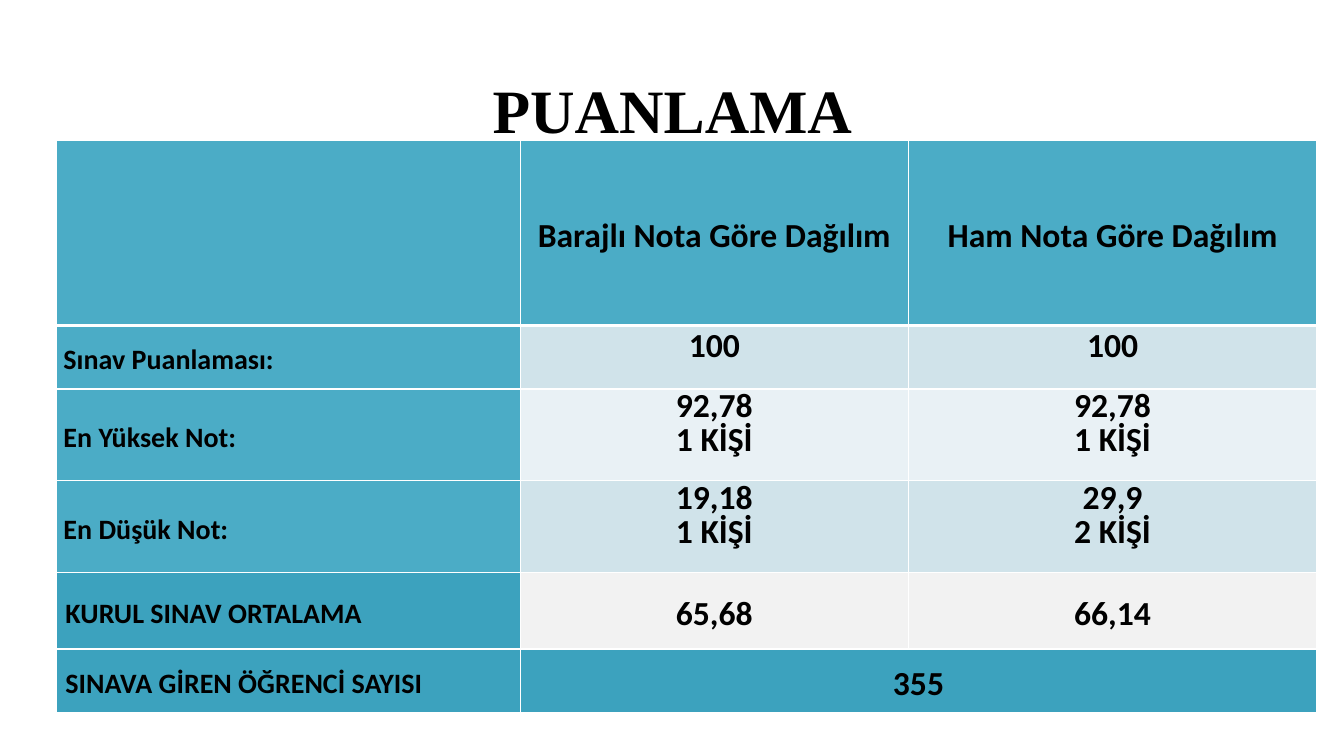
"""Build the PUANLAMA slide with its score table."""
from lxml.etree import SubElement
from pptx import Presentation
from pptx.dml.color import RGBColor
from pptx.enum.text import MSO_ANCHOR, MSO_AUTO_SIZE, PP_ALIGN
from pptx.oxml.ns import qn
from pptx.util import Inches, Pt

TITLE = "PUANLAMA"
ROWS = [
    ("", "Barajlı Nota Göre Dağılım", "Ham Nota Göre Dağılım"),
    ("Sınav Puanlaması:", "100", "100"),
    ("En Yüksek Not:", "92,78\n1 KİŞİ", "92,78\n1 KİŞİ"),
    ("En Düşük Not:", "19,18\n1 KİŞİ", "29,9\n2 KİŞİ"),
    ("KURUL SINAV ORTALAMA", "65,68", "66,14"),
    ("SINAVA GİREN ÖĞRENCİ SAYISI", "355", ""),
]
COL_WIDTHS = [4.6, 3.85, 4.05]
ROW_HEIGHTS = [1.84, 0.63, 0.91, 0.91, 0.76, 0.63]
COLORS = {"text": "000000", "border": "FFFFFF", "head": "4BACC6", "total": "3CA2BE",
          "band": "D0E3EA", "light": "E9F1F5", "mean": "F2F2F2"}
LABEL_FILLS = ["head"] * 4 + ["total"] * 2
VALUE_FILLS = ["head", "band", "light", "band", "mean", "total"]
SCORE_ROWS = (1, 2, 3)


def add_run(p, text, size, font):
    r = p.add_run()
    r.text = text
    r.font.size = Pt(size)
    r.font.name = font
    r.font.bold = True
    r.font.color.rgb = RGBColor.from_string(COLORS["text"])


def set_borders(cell, row):
    widths = {"a:lnL": 1, "a:lnR": 1, "a:lnT": 3 if row == 1 else 1, "a:lnB": 3 if row == 0 else 1}
    tcPr = cell._tc.get_or_add_tcPr()
    for i, (tag, width) in enumerate(widths.items()):
        ln = SubElement(tcPr, qn(tag), w=str(Pt(width)))
        fill = SubElement(ln, qn("a:solidFill"))
        SubElement(fill, qn("a:srgbClr"), val=COLORS["border"])
        tcPr.insert(i, ln)


def fill_cell(cell, row, col, text):
    is_label = col == 0
    cell.fill.solid()
    fills = LABEL_FILLS if is_label else VALUE_FILLS
    cell.fill.fore_color.rgb = RGBColor.from_string(COLORS[fills[row]])
    set_borders(cell, row)
    cell.vertical_anchor = MSO_ANCHOR.MIDDLE
    side, top = (0, 0) if (row, col) == (4, 2) else (0.07, 0.01)
    cell.margin_left = cell.margin_right = Inches(side)
    cell.margin_top, cell.margin_bottom = Inches(top), 0
    if not text:
        return
    tf = cell.text_frame
    for i, line in enumerate(text.split("\n")):
        p = tf.add_paragraph() if i else tf.paragraphs[0]
        p.alignment = PP_ALIGN.LEFT if is_label else PP_ALIGN.CENTER
        p.line_spacing = Pt(12) if row in SCORE_ROWS and not is_label else 1.15
        if i:
            p.space_before = Pt(12)
        if is_label and row in SCORE_ROWS:
            p.space_after = Pt(10)
        elif is_label:
            p._p.get_or_add_pPr().set("marL", str(Inches(0.02)))
        add_run(p, line, 20 if is_label else 24, "Calibri")


def main():
    prs = Presentation()
    prs.slide_width, prs.slide_height = Inches(13.33), Inches(7.5)
    s = prs.slides.add_slide(prs.slide_layouts[5])

    title = s.shapes.title
    title.left, title.top = Inches(0.92), Inches(0.4)
    title.width, title.height = Inches(11.5), Inches(1.45)
    tf = title.text_frame
    tf.auto_size = MSO_AUTO_SIZE.NONE
    tf.vertical_anchor = MSO_ANCHOR.MIDDLE
    p = tf.paragraphs[0]
    p.alignment = PP_ALIGN.CENTER
    p.line_spacing = 0.9
    add_run(p, TITLE, 44, "Times New Roman")

    table = s.shapes.add_table(len(ROWS), len(COL_WIDTHS), Inches(0.56), Inches(1.39),
                               Inches(sum(COL_WIDTHS)), Inches(sum(ROW_HEIGHTS))).table
    for column, width in zip(table.columns, COL_WIDTHS):
        column.width = Inches(width)
    for row, height in zip(table.rows, ROW_HEIGHTS):
        row.height = Inches(height)
    for r, texts in enumerate(ROWS):
        for c, text in enumerate(texts):
            fill_cell(table.cell(r, c), r, c, text)
    table.cell(5, 1).merge(table.cell(5, 2))

    prs.save("out.pptx")


if __name__ == "__main__":
    main()
